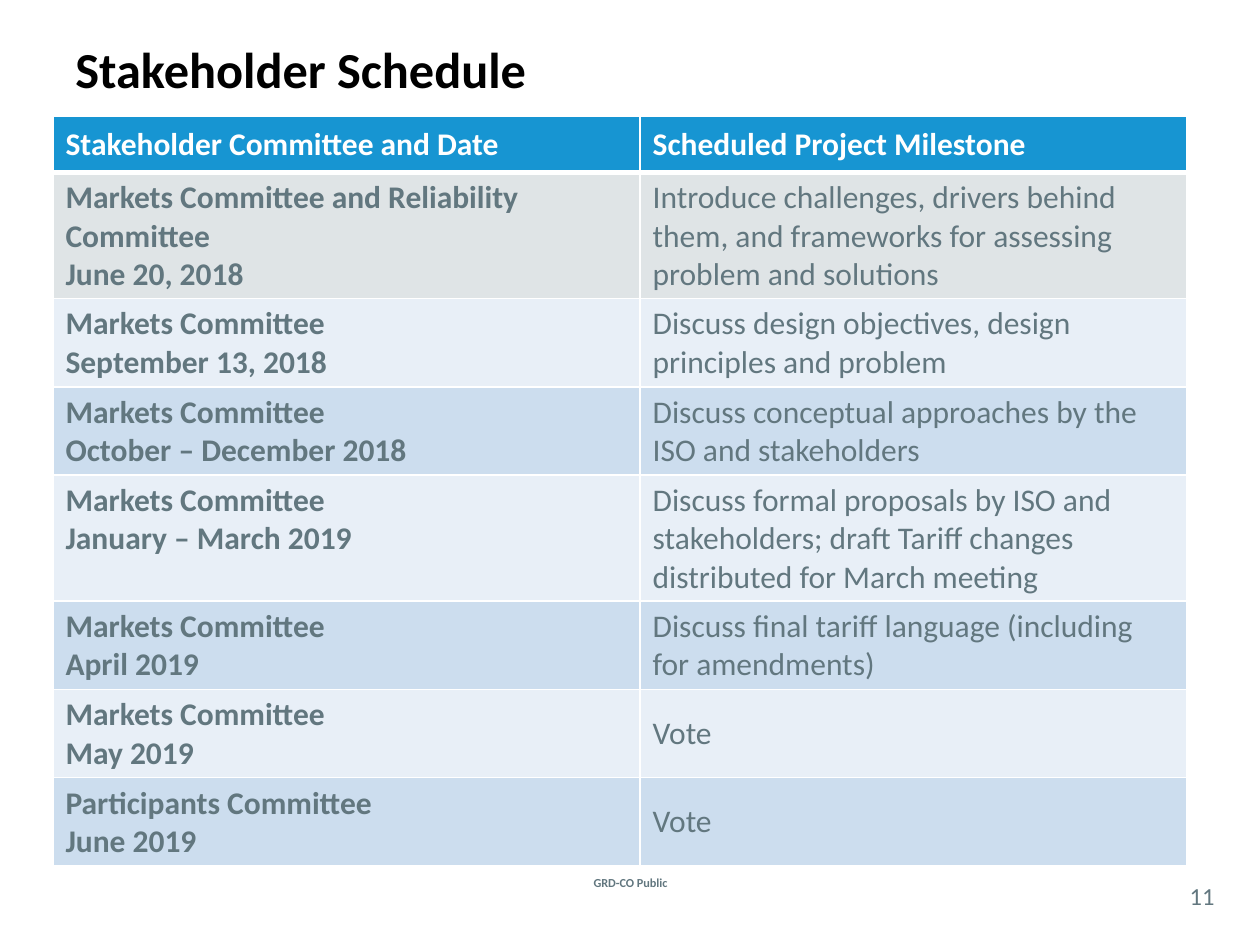
from lxml import etree
from pptx import Presentation
from pptx.dml.color import RGBColor
from pptx.enum.text import MSO_ANCHOR as Anchor, PP_ALIGN as Align
from pptx.oxml.ns import qn
from pptx.util import Pt

COLORS = {
    "title": "000000", "text": "62777F", "white": "FFFFFF", "header": "1795D2",
    "gray": "DFE4E6", "light": "E8EFF7", "blue": "CCDDEE",
}
COMMITTEE = "Markets Committee"
SCHEDULE = [
    (["Markets Committee and Reliability Committee", "June 20, 2018"],
     "Introduce challenges, drivers behind them, and frameworks for assessing problem and solutions"),
    ([COMMITTEE, "September 13, 2018"], "Discuss design objectives, design principles and problem"),
    ([COMMITTEE, "October – December 2018"], "Discuss conceptual approaches by the ISO and stakeholders"),
    ([COMMITTEE, "January – March 2019"],
     "Discuss formal proposals by ISO and stakeholders; draft Tariff changes distributed for March meeting"),
    ([COMMITTEE, "April 2019"], "Discuss final tariff language (including for amendments)"),
    ([COMMITTEE, "May 2019"], "Vote"),
    (["Participants Committee", "June 2019"], "Vote"),
]
ROW_HEIGHTS = [32.4, 70.56, 48.96, 48.96, 70.56, 48.96, 48.96, 48.96]


def write(frame, lines, size, color, bold=False, align=Align.LEFT):
    frame.word_wrap = True
    for i, line in enumerate(lines):
        paragraph = frame.paragraphs[0] if i == 0 else frame.add_paragraph()
        paragraph.alignment = align
        run = paragraph.add_run()
        run.text = line
        run.font.name = "Calibri"
        run.font.size = Pt(size)
        run.font.bold = bold
        run.font.color.rgb = RGBColor.from_string(COLORS[color])


def add_borders(cell, top, bottom):
    sides = [("lnL", 1), ("lnR", 1), ("lnT", top), ("lnB", bottom)]
    for position, (side, width) in enumerate(sides):
        line = etree.Element(qn(f"a:{side}"), w=str(Pt(width)))
        fill = etree.SubElement(line, qn("a:solidFill"))
        etree.SubElement(fill, qn("a:srgbClr"), val=COLORS["white"])
        cell._tc.get_or_add_tcPr().insert(position, line)


deck = Presentation()
deck.slide_width, deck.slide_height = Pt(720), Pt(540)
slide = deck.slides.add_slide(deck.slide_layouts[6])

# Title, footer label and page number
labels = [
    ((307.44, 498.24, 105.84, 12.24), "GRD-CO Public", 7, "text", True, Align.CENTER, None),
    ((36, 18, 648, 41.76), "Stakeholder Schedule", 28.8, "title", True, Align.LEFT, None),
    ((671.76, 501.12, 30.24, 20.88), "11", 14, "text", False, Align.CENTER, 0),
]
for bounds, wording, size, color, bold, align, margin in labels:
    frame = slide.shapes.add_textbox(*map(Pt, bounds)).text_frame
    frame.vertical_anchor = Anchor.MIDDLE
    if margin is not None:
        frame.margin_left = frame.margin_right = Pt(margin)
        frame.margin_top = frame.margin_bottom = Pt(margin)
    write(frame, [wording], size, color, bold, align)

# Schedule table
schedule = slide.shapes.add_table(
    len(ROW_HEIGHTS), 2, Pt(30.24), Pt(66.24), Pt(648), Pt(sum(ROW_HEIGHTS))).table
for column, width in zip(schedule.columns, (335.52, 312.48)):
    column.width = Pt(width)
for row, height in zip(schedule.rows, ROW_HEIGHTS):
    row.height = Pt(height)

rows = [(["Stakeholder Committee and Date"], "Scheduled Project Milestone")] + SCHEDULE
for r, (committee, milestone) in enumerate(rows):
    is_header = r == 0
    if r < 2:
        background = ("header", "gray")[r]
    else:
        background = ("light", "blue")[r % 2]
    for c, lines in enumerate((committee, [milestone])):
        cell = schedule.cell(r, c)
        cell.fill.solid()
        cell.fill.fore_color.rgb = RGBColor.from_string(COLORS[background])
        cell.vertical_anchor = Anchor.MIDDLE if is_header or c == 1 else Anchor.TOP
        write(cell.text_frame, lines, 18, "white" if is_header else "text",
              bold=is_header or c == 0)
        add_borders(cell, top=3 if r == 1 else 1, bottom=3 if is_header else 1)

deck.save("out.pptx")
